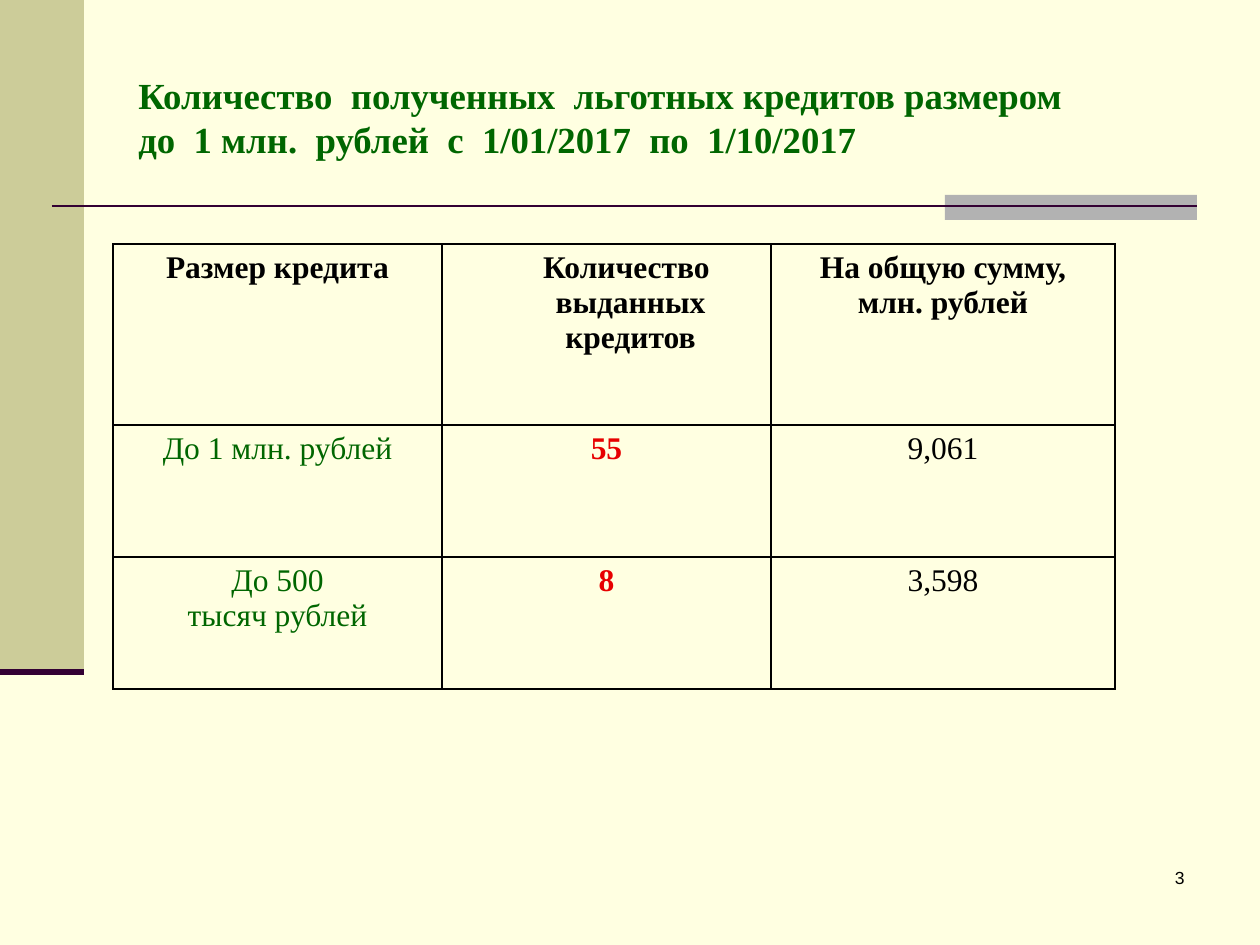
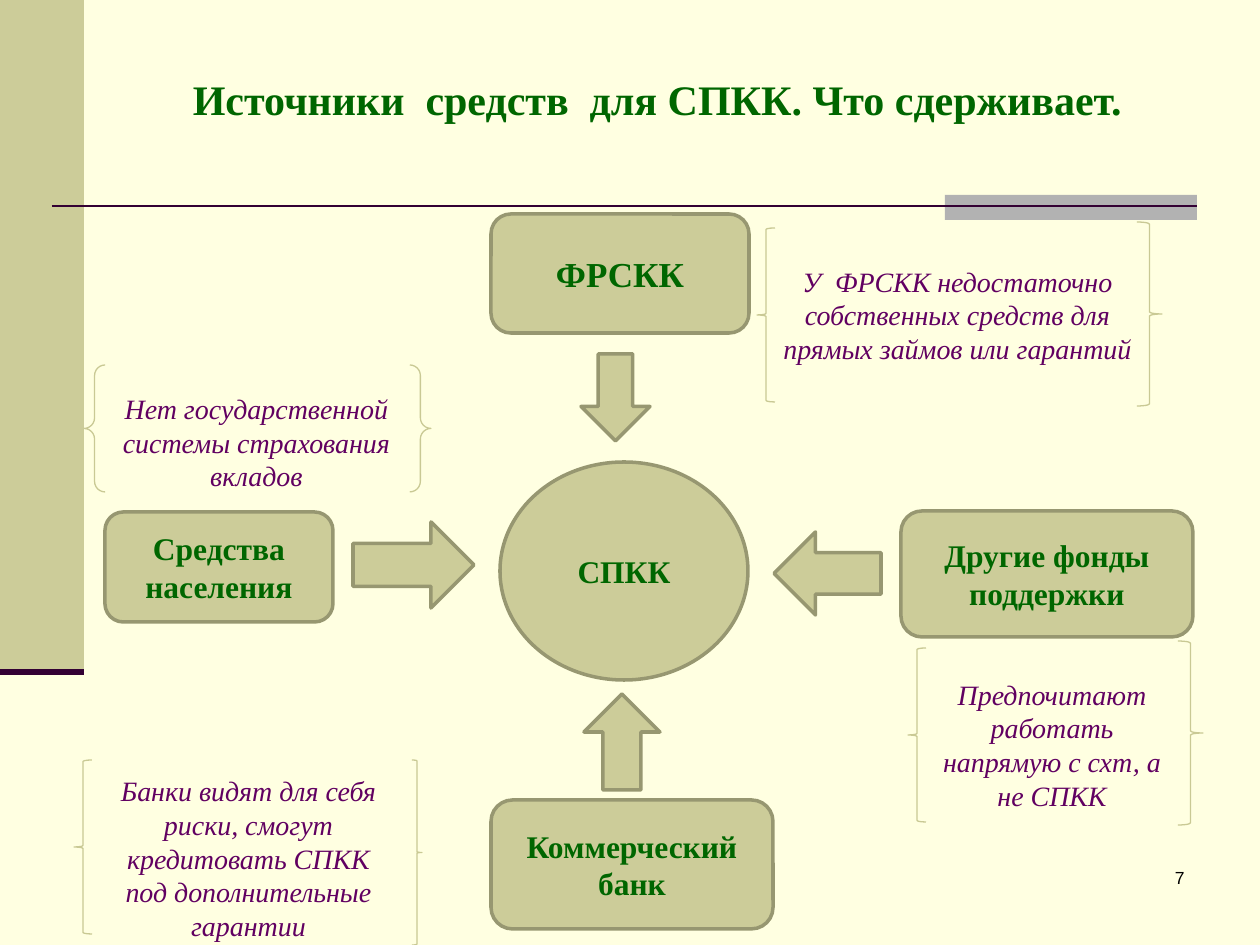
"""Build two slides on farm credit: a loan table and a map of fund sources."""
from dataclasses import dataclass

import pptx
import pptx.dml.color
import pptx.enum.shapes
import pptx.enum.text
import pptx.oxml.ns
import pptx.util
from lxml import etree

SCALE = 914400 / 126
Kind = pptx.enum.shapes.MSO_SHAPE
Align = pptx.enum.text.PP_ALIGN
Anchor = pptx.enum.text.MSO_ANCHOR


@dataclass(frozen=True)
class Theme:
    page: str = "FFFFE1"
    sand: str = "CCCC99"
    edge: str = "979771"
    brace: str = "C9C994"
    gray: str = "B2B2B2"
    rule: str = "330033"
    green: str = "006600"
    plum: str = "610061"
    red: str = "E70000"
    black: str = "000000"
    serif: str = "Times New Roman"
    sans: str = "Arial"
    head: int = 24
    long_head: int = 21
    large: int = 20
    body: int = 18
    note: int = 16
    foot: int = 10


@dataclass(frozen=True)
class Box:
    left: int
    top: int
    width: int
    height: int


@dataclass(frozen=True)
class Node:
    kind: Kind
    box: Box
    text: str = ""
    size: int = 18


@dataclass(frozen=True)
class Note:
    box: Box
    text: str


@dataclass(frozen=True)
class Cell:
    text: str
    color: str = "000000"
    bold: bool = False
    margin: int = 0
    indent: int = 0


THEME = Theme()

ROWS = [
    [Cell("Размер кредита", bold=True),
     Cell("Количество выданных кредитов", bold=True, margin=48, indent=-8),
     Cell("На общую сумму,\nмлн. рублей", bold=True)],
    [Cell("До 1 млн. рублей", THEME.green), Cell("55", THEME.red, True), Cell("9,061")],
    [Cell("До 500\nтысяч рублей", THEME.green), Cell("8", THEME.red, True), Cell("3,598")],
]

NODES = [
    Node(Kind.ROUNDED_RECTANGLE, Box(491, 800, 282, 129), "Коммерческий банк"),
    Node(Kind.OVAL, Box(500, 462, 248, 218), "СПКК"),
    Node(Kind.ROUNDED_RECTANGLE, Box(491, 214, 258, 119), "ФРСКК", THEME.large),
    Node(Kind.ROUNDED_RECTANGLE, Box(105, 512, 228, 110), "Средства населения"),
    Node(Kind.ROUNDED_RECTANGLE, Box(901, 511, 292, 126), "Другие фонды поддержки"),
    Node(Kind.UP_ARROW, Box(584, 694, 76, 96)),
    Node(Kind.DOWN_ARROW, Box(581, 354, 69, 87)),
    Node(Kind.RIGHT_ARROW, Box(353, 522, 121, 86)),
    Node(Kind.LEFT_ARROW, Box(774, 532, 107, 83)),
]

BRACES = [
    Node(Kind.LEFT_BRACE, Box(74, 760, 18, 174)),
    Node(Kind.RIGHT_BRACE, Box(412, 760, 10, 185)),
    Node(Kind.LEFT_BRACE, Box(757, 228, 18, 174)),
    Node(Kind.RIGHT_BRACE, Box(1137, 222, 25, 184)),
    Node(Kind.DOUBLE_BRACE, Box(84, 365, 347, 127)),
    Node(Kind.LEFT_BRACE, Box(908, 648, 18, 174)),
    Node(Kind.RIGHT_BRACE, Box(1178, 641, 25, 184)),
]

NOTES = [
    Note(Box(105, 771, 287, 174),
         "Банки видят для себя риски, смогут кредитовать СПКК под дополнительные гарантии"),
    Note(Box(751, 223, 413, 183),
         "У  ФРСКК недостаточно собственных средств для прямых займов или гарантий"),
    Note(Box(68, 367, 377, 150), "Нет государственной системы страхования вкладов"),
    Note(Box(924, 667, 256, 155), "Предпочитают работать напрямую с схт, а не СПКК"),
]


def emu(px: int) -> int:
    return round(px * SCALE)


def place(box: Box) -> tuple[int, ...]:
    return tuple(emu(n) for n in (box.left, box.top, box.width, box.height))


def paint(color: str) -> pptx.dml.color.RGBColor:
    return pptx.dml.color.RGBColor.from_string(color)


def write(frame, text: str, *, size: int, color: str, bold: bool = False,
          slant: bool = False, font: str = THEME.serif, align=Align.CENTER,
          anchor=Anchor.MIDDLE, margin: int = 0, indent: int = 0) -> None:
    frame.word_wrap = True
    frame.vertical_anchor = anchor
    for i, line in enumerate(text.split("\n")):
        para = frame.add_paragraph() if i else frame.paragraphs[0]
        para.text = line
        para.alignment = align
        props = para._p.get_or_add_pPr()
        props.set("marL", str(emu(margin)))
        props.set("indent", str(emu(indent)))
        for run in para.runs:
            run.font.name = font
            run.font.size = pptx.util.Pt(size)
            run.font.bold = bold
            run.font.italic = slant
            run.font.color.rgb = paint(color)


def add_text(slide, box: Box, text: str, **style) -> None:
    write(slide.shapes.add_textbox(*place(box)).text_frame, text, **style)


def add_form(slide, kind: Kind, box: Box, fill: str = "", line: str = "",
             weight: float = 0):
    form = slide.shapes.add_shape(kind, *place(box))
    form.shadow.inherit = False
    if fill:
        form.fill.solid()
        form.fill.fore_color.rgb = paint(fill)
    else:
        form.fill.background()
    if line:
        form.line.color.rgb = paint(line)
        form.line.width = pptx.util.Pt(weight)
    else:
        form.line.fill.background()
    return form


def add_rule(slide, left: int, right: int, top: int, weight: float) -> None:
    rule = slide.shapes.add_connector(
        pptx.enum.shapes.MSO_CONNECTOR.STRAIGHT, emu(left), emu(top), emu(right), emu(top))
    rule.line.color.rgb = paint(THEME.rule)
    rule.line.width = pptx.util.Pt(weight)
    etree.SubElement(rule._element.spPr, pptx.oxml.ns.qn("a:effectLst"))


def add_page(deck, number: int):
    slide = deck.slides.add_slide(deck.slide_layouts[6])
    slide.background.fill.solid()
    slide.background.fill.fore_color.rgb = paint(THEME.page)
    add_form(slide, Kind.RECTANGLE, Box(0, 0, 84, 672), THEME.sand)
    add_form(slide, Kind.RECTANGLE, Box(945, 195, 252, 25), THEME.gray)
    add_rule(slide, 52, 1197, 206, 1.5)
    add_rule(slide, 0, 84, 672, 3.5)
    add_text(slide, Box(935, 861, 262, 63), str(number), size=THEME.foot,
             color=THEME.black, font=THEME.sans, align=Align.RIGHT, anchor=Anchor.TOP)
    return slide


def add_title(slide, box: Box, text: str, size: int, align) -> None:
    add_text(slide, box, text, size=size, color=THEME.green, bold=True, align=align)


def add_edges(cell) -> None:
    props = cell._tc.get_or_add_tcPr()
    for side in ("lnL", "lnR", "lnT", "lnB"):
        edge = etree.SubElement(props, pptx.oxml.ns.qn(f"a:{side}"), w=str(pptx.util.Pt(1)))
        fill = etree.SubElement(edge, pptx.oxml.ns.qn("a:solidFill"))
        etree.SubElement(fill, pptx.oxml.ns.qn("a:srgbClr"), val=THEME.black)


def add_grid(slide, left: int, top: int, widths: list[int], heights: list[int]) -> None:
    box = Box(left, top, sum(widths), sum(heights))
    grid = slide.shapes.add_table(len(heights), len(widths), *place(box)).table
    grid.first_row = grid.horz_banding = False
    for col, width in zip(grid.columns, widths):
        col.width = emu(width)
    for row, height, items in zip(grid.rows, heights, ROWS):
        row.height = emu(height)
        for cell, item in zip(row.cells, items):
            add_edges(cell)
            cell.fill.background()
            write(cell.text_frame, item.text, size=THEME.body, color=item.color,
                  bold=item.bold, anchor=Anchor.TOP, margin=item.margin, indent=item.indent)


def draw_loans(deck) -> None:
    slide = add_page(deck, 3)
    add_title(slide, Box(126, 38, 1071, 157),
              "Количество  полученных  льготных кредитов размером\v"
              "до  1 млн.  рублей  c  1/01/2017  по  1/10/2017",
              THEME.long_head, Align.LEFT)
    add_grid(slide, 113, 244, [329, 329, 344], [181, 132, 132])


def draw_funds(deck) -> None:
    slide = add_page(deck, 7)
    add_title(slide, Box(122, 35, 1071, 127),
              "Источники  средств  для СПКК. Что сдерживает.", THEME.head, Align.CENTER)
    for node in NODES:
        form = add_form(slide, node.kind, node.box, THEME.sand, THEME.edge, 2)
        if node.text:
            write(form.text_frame, node.text, size=node.size, color=THEME.green, bold=True)
    for brace in BRACES:
        add_form(slide, brace.kind, brace.box, line=THEME.brace, weight=0.75)
    for note in NOTES:
        add_text(slide, note.box, note.text, size=THEME.note, color=THEME.plum, slant=True)


def main() -> None:
    deck = pptx.Presentation()
    deck.slide_width, deck.slide_height = emu(1260), emu(945)
    draw_loans(deck)
    draw_funds(deck)
    deck.save("out.pptx")


if __name__ == "__main__":
    main()
